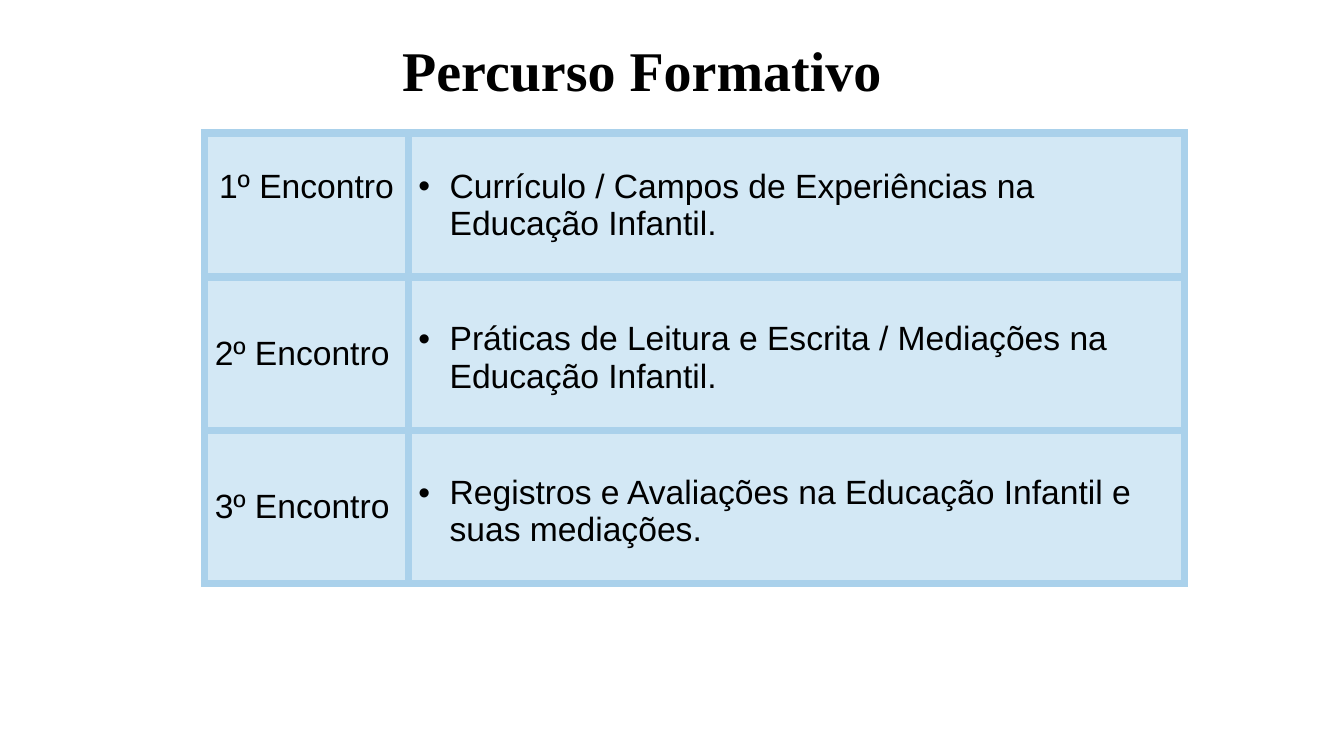
from dataclasses import dataclass

from lxml.etree import SubElement
from pptx import Presentation
from pptx.dml.color import RGBColor
from pptx.enum.text import MSO_ANCHOR, PP_ALIGN
from pptx.oxml.ns import qn
from pptx.util import Inches, Pt


@dataclass(frozen=True)
class Theme:
    text: str = "000000"
    cell: str = "D3E8F5"
    border: str = "AAD1EB"
    title_font: str = "Times New Roman"
    body_font: str = "Arial"
    title_size: int = 40
    body_size: int = 24
    border_width: int = 6


MEETINGS = [
    ("1º Encontro", "Currículo / Campos de Experiências na Educação Infantil."),
    ("2º Encontro", "Práticas de Leitura e Escrita / Mediações na Educação Infantil."),
    ("3º Encontro", "Registros e Avaliações na Educação Infantil e suas mediações."),
]


def write_text(frame, text, *, font, size, color, bold=False,
               align=PP_ALIGN.LEFT, spacing=None, bullet_indent=None):
    frame.word_wrap = True
    paragraph = frame.paragraphs[0]
    paragraph.alignment = align
    if spacing:
        paragraph.line_spacing = spacing
    if bullet_indent:
        properties = paragraph._p.get_or_add_pPr()
        properties.set("marL", str(bullet_indent))
        properties.set("indent", str(-bullet_indent))
        SubElement(properties, qn("a:buFont"), typeface="Arial")
        SubElement(properties, qn("a:buChar"), char="•")
    run = paragraph.add_run()
    run.text = text
    run.font.name = font
    run.font.size = Pt(size)
    run.font.bold = bold
    run.font.color.rgb = RGBColor.from_string(color)


class SlideBuilder:
    def __init__(self, presentation, theme):
        self.theme = theme
        self.slide = presentation.slides.add_slide(presentation.slide_layouts[5])

    def title(self, text, left, top, width, height):
        shape = self.slide.shapes.title
        shape.left, shape.top = Inches(left), Inches(top)
        shape.width, shape.height = Inches(width), Inches(height)
        shape.text_frame.vertical_anchor = MSO_ANCHOR.BOTTOM
        write_text(shape.text_frame, text, font=self.theme.title_font,
                   size=self.theme.title_size, color=self.theme.text,
                   bold=True, align=PP_ALIGN.CENTER, spacing=0.9)

    def table(self, left, top, widths, heights):
        table = self.slide.shapes.add_table(
            len(heights), len(widths), Inches(left), Inches(top),
            Inches(sum(widths)), Inches(sum(heights))).table
        table.first_row = False
        table.horz_banding = False
        for column, width in zip(table.columns, widths):
            column.width = Inches(width)
        for row, height in zip(table.rows, heights):
            row.height = Inches(height)
        return table

    def cell(self, cell, text, *, anchor=MSO_ANCHOR.MIDDLE, margin_top=0.05,
             margin_bottom=0.05, **text_format):
        cell.vertical_anchor = anchor
        cell.margin_top = Inches(margin_top)
        cell.margin_bottom = Inches(margin_bottom)
        self.borders(cell)
        cell.fill.solid()
        cell.fill.fore_color.rgb = RGBColor.from_string(self.theme.cell)
        write_text(cell.text_frame, text, font=self.theme.body_font,
                   size=self.theme.body_size, color=self.theme.text, **text_format)

    def borders(self, cell):
        properties = cell._tc.get_or_add_tcPr()
        for side in ("lnL", "lnR", "lnT", "lnB"):
            line = SubElement(properties, qn(f"a:{side}"),
                              w=str(Pt(self.theme.border_width)))
            fill = SubElement(line, qn("a:solidFill"))
            SubElement(fill, qn("a:srgbClr"), val=self.theme.border)


def main():
    presentation = Presentation()
    presentation.slide_width = Inches(13.33)
    presentation.slide_height = Inches(7.5)
    builder = SlideBuilder(presentation, Theme())
    builder.title("Percurso Formativo", 0.99, 0.31, 10.75, 0.77)
    table = builder.table(2.03, 1.32, [2.02, 7.7], [1.43, 1.52, 1.52])
    for index, (meeting, topic) in enumerate(MEETINGS):
        if index == 0:
            meeting_format = {"align": PP_ALIGN.CENTER, "margin_bottom": 0.42}
            topic_format = {}
        else:
            meeting_format = {}
            topic_format = {"anchor": MSO_ANCHOR.TOP, "margin_top": 0.43}
        builder.cell(table.cell(index, 0), meeting, **meeting_format)
        builder.cell(table.cell(index, 1), topic,
                     bullet_indent=Inches(0.31), **topic_format)
    presentation.save("out.pptx")


if __name__ == "__main__":
    main()
